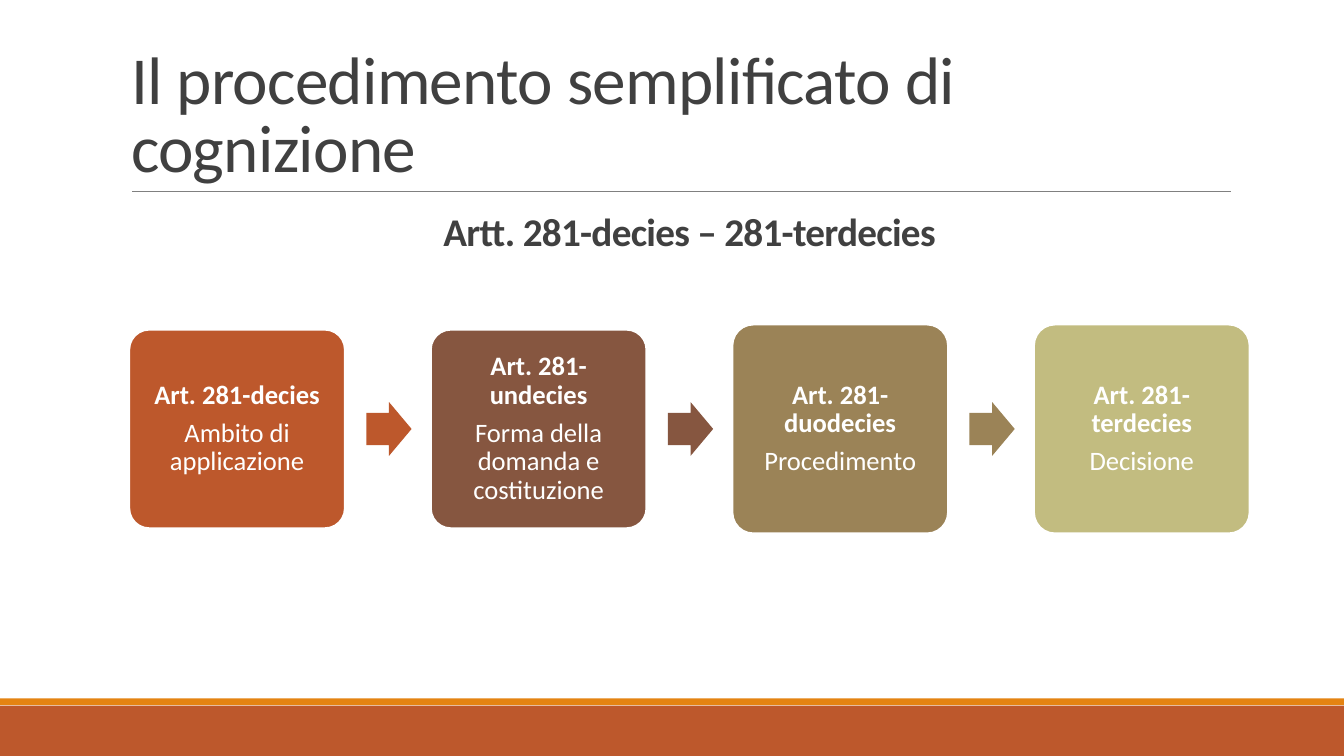
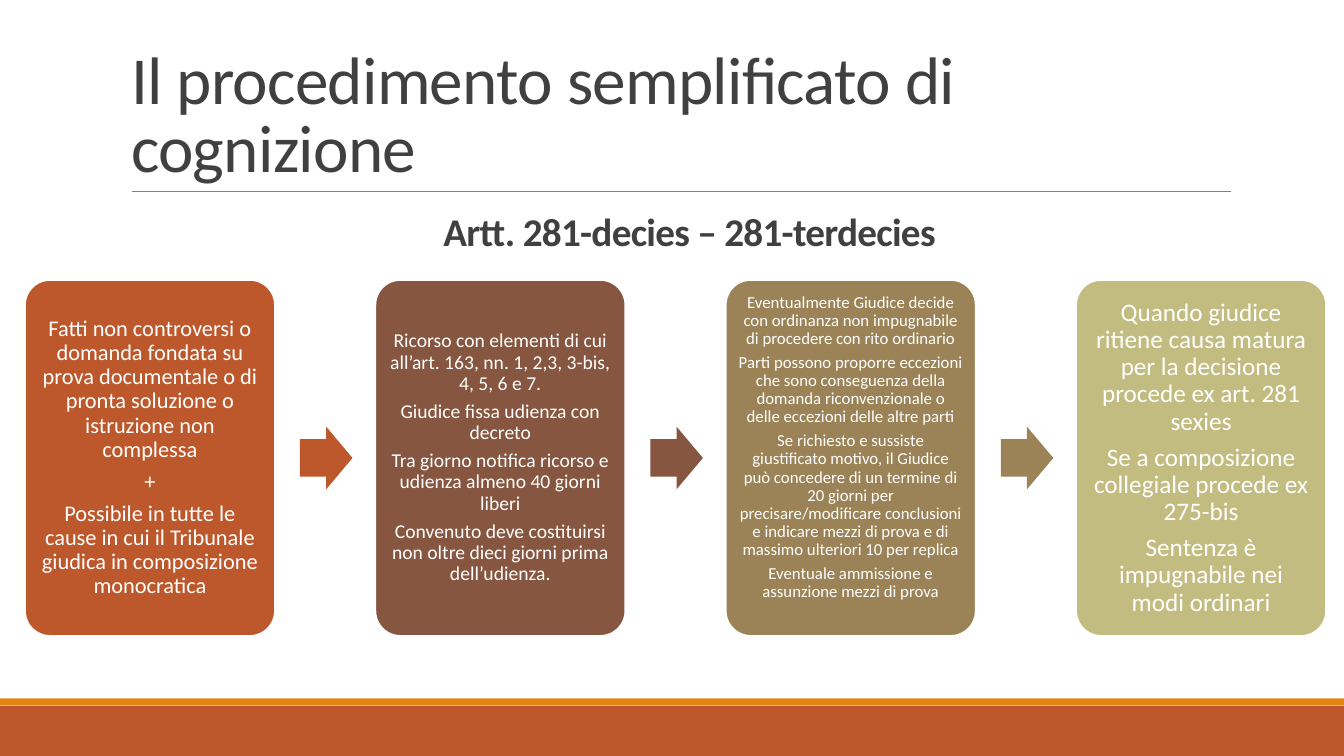
from pptx import Presentation
from pptx.dml.color import RGBColor
from pptx.enum import shapes, text
from pptx.oxml.ns import qn
from pptx.util import Cm, Pt

HUES = {"rust": "BD582C", "brown": "865640", "tan": "9B8357", "sage": "C2BC80",
        "orange": "E48312", "grey": "808080", "ink": "404040", "white": "FFFFFF"}
STEPS = ["rust", "brown", "tan", "sage"]
KIND = shapes.MSO_SHAPE
ALIGN = text.PP_ALIGN


def block(page, kind, x, y, w, h, hue):
    """Add a flat filled shape without outline; lengths in cm."""
    shape = page.shapes.add_shape(kind, Cm(x), Cm(y), Cm(w), Cm(h))
    shape.shadow.inherit = False
    shape.fill.solid()
    shape.fill.fore_color.rgb = RGBColor.from_string(HUES[hue])
    shape.line.fill.background()
    return shape


def write(frame, lines, size, hue, align, pitch, bold=0, after=0, track=0):
    """Fill a frame with paragraphs, the first `bold` of them in bold."""
    frame.word_wrap = True
    frame.auto_size = text.MSO_AUTO_SIZE.NONE
    frame.text = "\n".join(lines)
    for n, para in enumerate(frame.paragraphs):
        para.alignment = align
        para.line_spacing = pitch
        para.space_before = Pt(0)
        para.space_after = Pt(after * size)
        for run in para.runs:
            run.font.name = "Calibri"
            run.font.size = Pt(size)
            run.font.bold = n < bold
            run.font.color.rgb = RGBColor.from_string(HUES[hue])
            run.font._element.set("spc", str(track))


# Each box: height in cm, text size, inset in cm, extra bottom inset, paragraphs
FLOWS = [
    {"left": 3.26, "mid": 10.81, "step": 7.6, "wide": 5.43, "bold": 1, "boxes": [
        (5, 19, 0.2, 0, ["Art. 281-decies", "Ambito di applicazione"]),
        (5, 19, 0.2, 0, ["Art. 281-undecies", "Forma della domanda e costituzione"]),
        (5.26, 19, 0.2, 0, ["Art. 281-duodecies", "Procedimento"]),
        (5.26, 19, 0.2, 0, ["Art. 281-terdecies", "Decisione"]),
    ]},
    {"left": 0.63, "mid": 11.54, "step": 8.83, "wide": 6.3, "bold": 0, "boxes": [
        (8.97, 16, 0.17, 0, [
            "Fatti non controversi o domanda fondata su prova documentale o di "
            "pronta soluzione o istruzione non complessa",
            "+",
            "Possibile in tutte le cause in cui il Tribunale giudica in "
            "composizione monocratica"]),
        (8.97, 14, 0.15, 0, [
            "Ricorso con elementi di cui all’art. 163, nn. 1, 2,3, 3-bis, 4, 5, 6 e 7.",
            "Giudice fissa udienza con decreto",
            "Tra giorno notifica ricorso e udienza almeno 40 giorni liberi",
            "Convenuto deve costituirsi non oltre dieci giorni prima dell’udienza."]),
        (8.97, 12, 0.13, 0.53, [
            "Eventualmente Giudice decide con ordinanza non impugnabile di "
            "procedere con rito ordinario",
            "Parti possono proporre eccezioni che sono conseguenza della domanda "
            "riconvenzionale o delle eccezioni delle altre parti",
            "Se richiesto e sussiste giustificato motivo, il Giudice può concedere "
            "di un termine di 20 giorni per precisare/modificare conclusioni e "
            "indicare mezzi di prova e di massimo ulteriori 10 per replica",
            "Eventuale ammissione e assunzione mezzi di prova"]),
        (8.97, 18, 0.18, 0, [
            "Quando giudice ritiene causa matura per la decisione procede ex "
            "art. 281 sexies",
            "Se a composizione collegiale procede ex 275-bis",
            "Sentenza è impugnabile nei modi ordinari"]),
    ]},
]

deck = Presentation()
deck.slide_width, deck.slide_height = Cm(33.87), Cm(19.05)
layout = deck.slide_layouts[5]
head = layout.placeholders[0]
head.left, head.top, head.width, head.height = Cm(3.05), Cm(0.79), Cm(28.65), Cm(4.04)
pages = [deck.slides.add_slide(layout) for flow in FLOWS]

# Bands and title rule are drawn once, then moved to the layout
rule = pages[0].shapes.add_connector(
    shapes.MSO_CONNECTOR.STRAIGHT, Cm(3.33), Cm(4.83), Cm(31.01), Cm(4.83))
rule.line.color.rgb = RGBColor.from_string(HUES["grey"])
rule.line.width = Pt(0.5)
props = rule.element.spPr
props.append(props.makeelement(qn("a:effectLst"), {}))
foot = block(pages[0], KIND.RECTANGLE, 0, 17.78, 33.87, 1.27, "rust")
strip = block(pages[0], KIND.RECTANGLE, 0, 17.6, 33.87, 0.17, "orange")
for part in (foot, strip, rule):
    layout.shapes.element.append(part.element)

for page, flow in zip(pages, FLOWS):
    title = page.shapes.title.text_frame
    write(title, ["Il procedimento semplificato di cognizione"], 48, "ink",
          ALIGN.LEFT, 0.85, track=-50)
    title.vertical_anchor = text.MSO_ANCHOR.BOTTOM

    sub = page.shapes.add_textbox(Cm(3.05), Cm(2.51), Cm(28.65), Cm(4.04)).text_frame
    write(sub, ["Artt. 281-decies – 281-terdecies"], 28, "ink",
          ALIGN.CENTER, 0.85, bold=1, track=-50)
    sub.vertical_anchor = text.MSO_ANCHOR.BOTTOM

    wide, mid = flow["wide"], flow["mid"]
    for n, (high, size, inset, extra, lines) in enumerate(flow["boxes"]):
        x = flow["left"] + n * flow["step"]
        box = block(page, KIND.ROUNDED_RECTANGLE, x, mid - high / 2, wide, high, STEPS[n])
        box.adjustments[0] = 0.1
        box.line.color.rgb = RGBColor.from_string(HUES["white"])
        box.line.width = Pt(1.25)
        frame = box.text_frame
        frame.margin_left = frame.margin_right = frame.margin_top = Cm(inset)
        frame.margin_bottom = Cm(inset + extra)
        frame.vertical_anchor = text.MSO_ANCHOR.MIDDLE
        write(frame, lines, size, "white", ALIGN.CENTER, 0.9, flow["bold"], after=0.35)
        if n < len(STEPS) - 1:
            tall = 0.25 * wide
            arrow = block(page, KIND.RIGHT_ARROW, x + 1.1 * wide, mid - tall / 2,
                          0.21 * wide, tall, STEPS[n])
            arrow.adjustments[0] = 0.6

deck.save("out.pptx")
